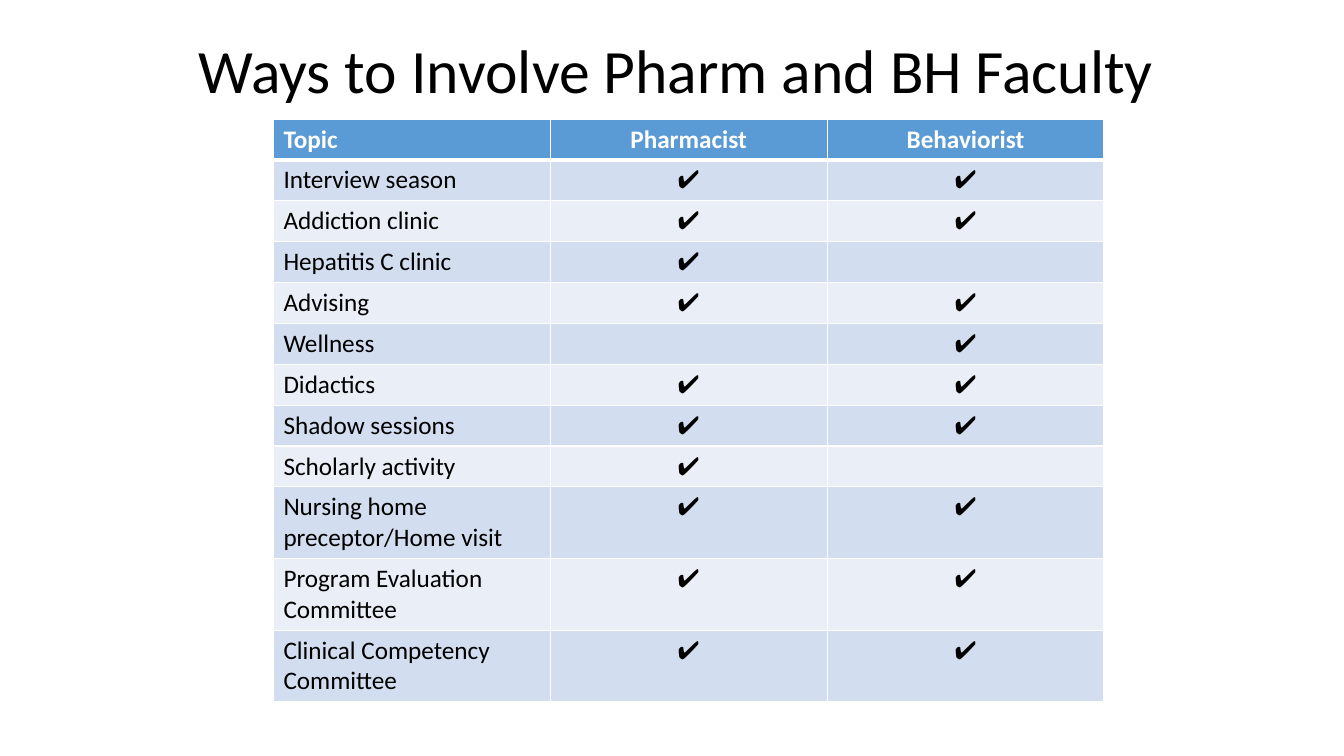
from pptx import Presentation, util as u
from pptx.dml.color import RGBColor
from pptx.enum import text
from pptx.oxml import parse_xml
from pptx.oxml.ns import nsdecls

CHECK = "✔"
HEADINGS = ["Topic", "Pharmacist", "Behaviorist"]
TOPICS = [
    ("Interview season", True, True),
    ("Addiction clinic", True, True),
    ("Hepatitis C clinic", True, False),
    ("Advising", True, True),
    ("Wellness", False, True),
    ("Didactics", True, True),
    ("Shadow sessions", True, True),
    ("Scholarly activity", True, False),
    ("Nursing home preceptor/Home visit", True, True),
    ("Program Evaluation Committee", True, True),
    ("Clinical Competency Committee", True, True),
]


def colour(value):
    return RGBColor.from_string(value)


class FacultySlide:
    font = "Calibri"
    ink, white = "000000", "FFFFFF"
    header = "5B9BD5"
    bands = ["D2DEEF", "EAEFF7"]

    def __init__(self, deck):
        self.page = deck.slides.add_slide(deck.slide_layouts[5])

    def add_words(self, para, words, size, shade, bold=False):
        span = para.add_run()
        span.text = words
        span.font.name = self.font
        span.font.size = u.Pt(size)
        span.font.bold = bold
        span.font.color.rgb = colour(shade)

    def title(self, words, left, top, width, height):
        box = self.page.shapes.title
        box.left, box.top = u.Pt(left), u.Pt(top)
        box.width, box.height = u.Pt(width), u.Pt(height)
        box.text_frame.vertical_anchor = text.MSO_ANCHOR.MIDDLE
        para = box.text_frame.paragraphs[0]
        para.alignment = text.PP_ALIGN.LEFT
        para.line_spacing = 0.9
        self.add_words(para, words, 44, self.ink)

    def borders(self, cell, top, bottom):
        """Draw white cell edges, 1 pt at the sides."""
        properties = cell._tc.get_or_add_tcPr()
        for side, width in zip("LRTB", (1, 1, top, bottom)):
            properties.append(parse_xml(
                f'<a:ln{side} {nsdecls("a")} w="{u.Pt(width)}"><a:solidFill>'
                f'<a:srgbClr val="{self.white}"/></a:solidFill></a:ln{side}>'))

    def table(self, rows, left, top, column_width, row_height):
        """Add a banded table whose first row is the header."""
        columns = len(rows[0])
        grid = self.page.shapes.add_table(
            len(rows), columns, u.Pt(left), u.Pt(top),
            u.Pt(column_width * columns), u.Pt(row_height * len(rows))).table
        for r, row in enumerate(rows):
            is_header = r == 0
            fill = self.header if is_header else self.bands[(r - 1) % 2]
            for c, words in enumerate(row):
                cell = grid.cell(r, c)
                self.borders(cell, 3 if r == 1 else 1, 3 if is_header else 1)
                cell.fill.solid()
                cell.fill.fore_color.rgb = colour(fill)
                para = cell.text_frame.paragraphs[0]
                if c:
                    para.alignment = text.PP_ALIGN.CENTER
                if words:
                    shade = self.white if is_header else self.ink
                    self.add_words(para, words, 18, shade, is_header)


def main():
    deck = Presentation()
    deck.slide_width, deck.slide_height = u.Pt(960), u.Pt(540)
    slide = FacultySlide(deck)
    slide.title("Ways to Involve Pharm and BH Faculty", 134.6, 0, 802, 104.4)
    rows = [HEADINGS]
    for topic, *involved in TOPICS:
        rows.append([topic] + [CHECK if joins else "" for joins in involved])
    slide.table(rows, 195.3, 85, 197.75, 29.2)
    deck.save("out.pptx")


if __name__ == "__main__":
    main()
